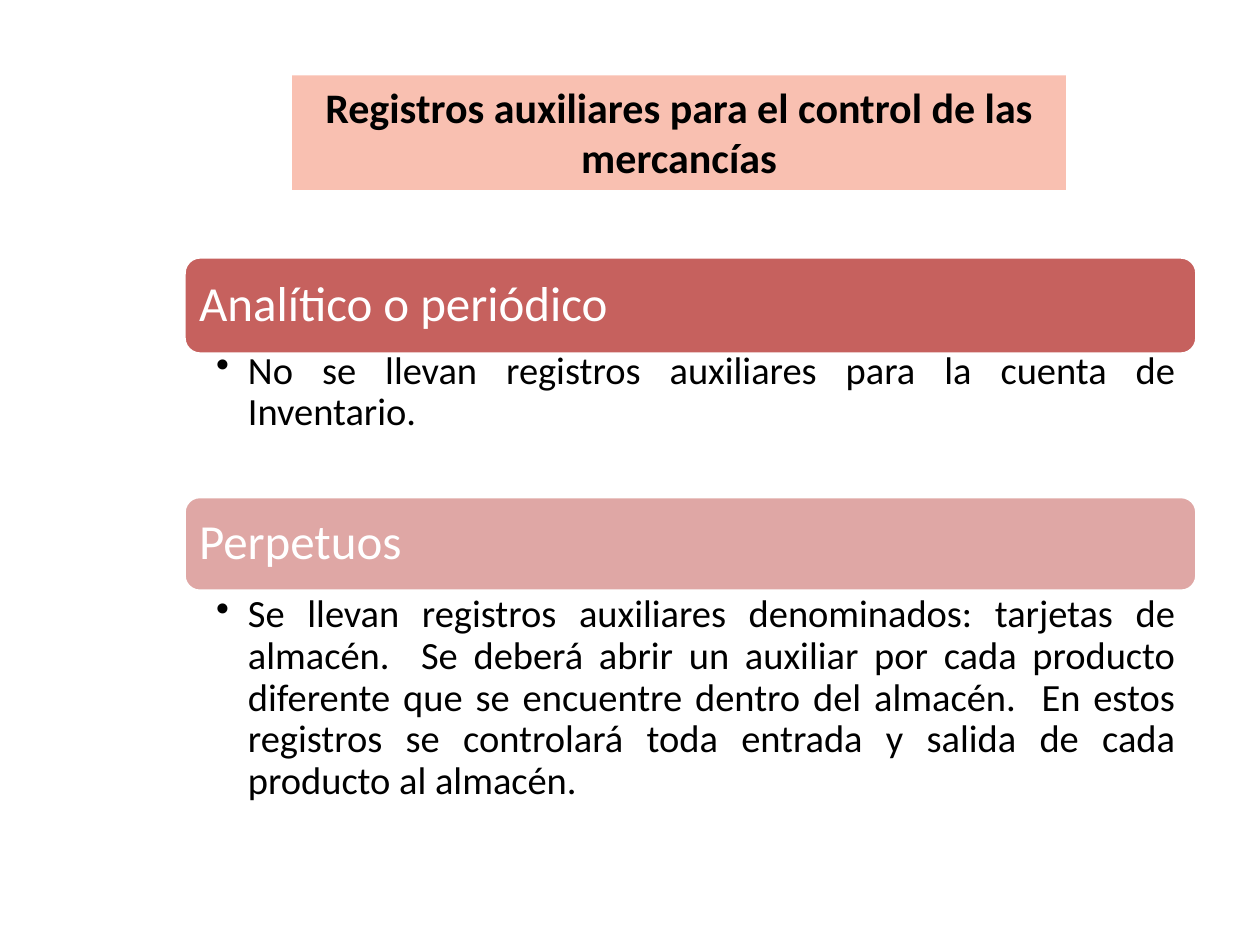
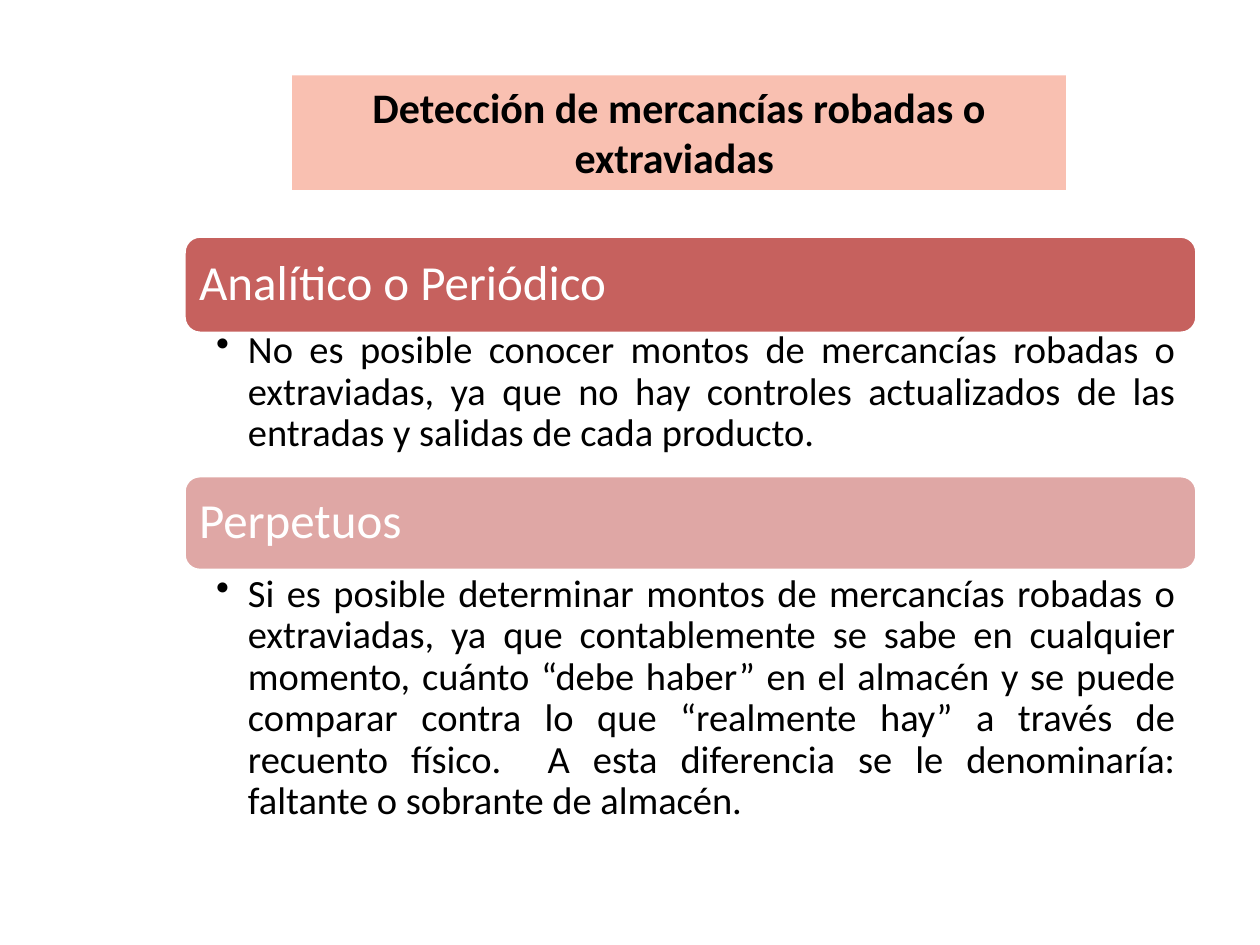
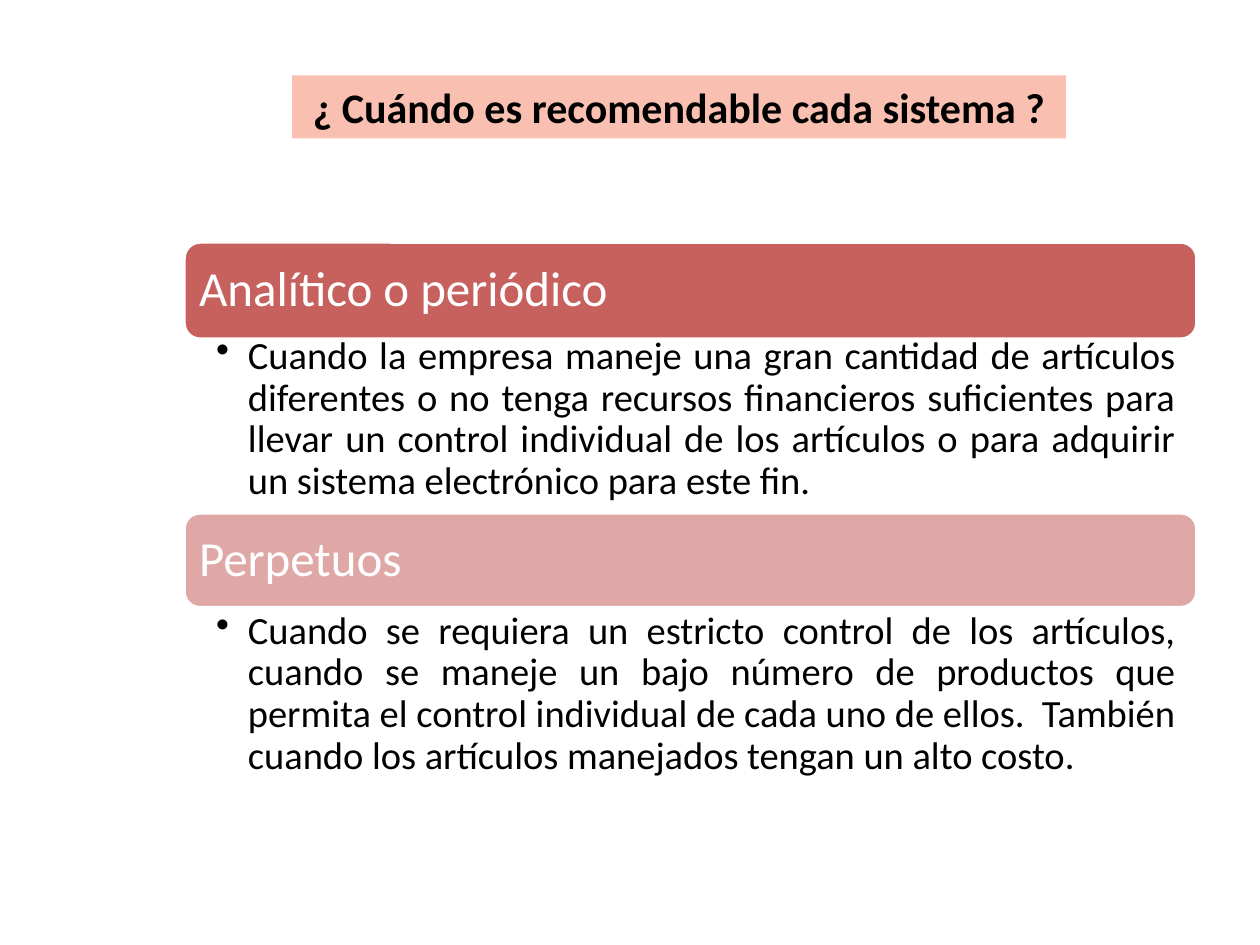
from lxml.etree import SubElement as Sub
from pptx import Presentation
from pptx.dml.color import RGBColor
from pptx.enum.shapes import MSO_SHAPE as Form
from pptx.enum.text import MSO_ANCHOR as Anchor, MSO_AUTO_SIZE as Fit, PP_ALIGN as Align
from pptx.oxml.ns import qn
from pptx.util import Cm, Pt

# Shared style
FONT = "Calibri"
BLACK, WHITE, PEACH, RED = "000000", "FFFFFF", "F9C0B1", "C0504D"

# Shared layout, in centimetres
LEFT, WIDE = 3.71, 20.42
BAR_ONE, BAR_TWO = 1.96, 1.91
LAP = 0.13  # how far the first text slides under its bar


def tint(color, code):
    color.rgb = RGBColor.from_string(code)


class Deck:
    def __init__(self):
        self.prs = Presentation()
        self.prs.slide_width, self.prs.slide_height = Cm(25.4), Cm(19.05)
        self.slide = None

    def page(self):
        self.slide = self.prs.slides.add_slide(self.prs.slide_layouts[6])

    def shape(self, form, box, code):
        shape = self.slide.shapes.add_shape(form, *map(Cm, box))
        shape.shadow.inherit = False
        shape.fill.solid()
        tint(shape.fill.fore_color, code)
        return shape

    def inset(self, frame, left, top, right, low):
        frame.margin_left, frame.margin_top = Cm(left), Cm(top)
        frame.margin_right, frame.margin_bottom = Cm(right), Cm(low)

    def label(self, frame, text, size, code, align, bold=False):
        frame.word_wrap = True
        par = frame.paragraphs[0]
        par.text, par.alignment = text, align
        font = par.font
        font.name, font.size, font.bold = FONT, Pt(size), bold
        tint(font.color, code)
        return par

    def title(self, text, high):
        shape = self.shape(Form.RECTANGLE, (5.89, 1.52, 15.6, high), PEACH)
        shape.line.fill.background()
        frame = shape.text_frame
        frame.vertical_anchor = Anchor.TOP
        self.label(frame, text, 24, BLACK, Align.CENTER, True)
        frame.auto_size = Fit.SHAPE_TO_FIT_TEXT

    def bar(self, text, top, high, alpha):
        shape = self.shape(Form.ROUNDED_RECTANGLE, (LEFT, top, WIDE, high), RED)
        fill = shape.fill._xPr.find(qn("a:solidFill"))
        Sub(fill[0], qn("a:alpha"), val=str(alpha * 1000))
        tint(shape.line.color, WHITE)
        shape.line.width = Pt(2)
        frame = shape.text_frame
        frame.vertical_anchor = Anchor.MIDDLE
        self.inset(frame, 0.21, 0.21, 0.21, 0.21)
        self.label(frame, text, 28, WHITE, Align.LEFT).line_spacing = 0.9

    def body(self, text, top, high):
        box = self.slide.shapes.add_textbox(*map(Cm, (LEFT, top, WIDE, high)))
        frame = box.text_frame
        self.inset(frame, 0.65, 0.07, 0.43, 0.07)
        # The bullet goes in before the font
        par = frame.paragraphs[0]
        par.level = 1
        props = par._p.get_or_add_pPr()
        props.set("marL", str(Cm(0.64)))
        props.set("indent", str(-Cm(0.64)))
        Sub(props, qn("a:buChar"), char="•")
        self.label(frame, text, 22, BLACK, Align.JUSTIFY).line_spacing = 0.9

    def pair(self, top, step, last, name, first, second):
        """Two bars, step apart, each with its text below."""
        start = BAR_ONE - LAP
        self.bar(name, top, BAR_ONE, 90)
        self.body(first, top + start, step - start)
        self.bar("Perpetuos", top + step, BAR_TWO, 50)
        self.body(second, top + step + BAR_TWO, last)


# Title, title height, then top, step, last height, name and both texts
PAGES = [
    ("Registros auxiliares para el control de las mercancías", 2.31,
     (5.18, 4.83, 4.5, "Analítico o periódico",
      "No se llevan registros auxiliares para la cuenta de Inventario.",
      "Se llevan registros auxiliares denominados: tarjetas de almacén.  "
      "Se deberá abrir un auxiliar por cada producto diferente que se "
      "encuentre dentro del almacén.  En estos registros se controlará "
      "toda entrada y salida de cada producto al almacén.")),
    ("Detección de mercancías robadas o extraviadas ", 2.31,
     (4.76, 4.83, 5.33, "Analítico o Periódico",
      "No es posible conocer montos de mercancías robadas o extraviadas, "
      "ya que no hay controles actualizados de las entradas y salidas de "
      "cada producto.",
      "Si es posible determinar montos de mercancías robadas o "
      "extraviadas, ya que contablemente se sabe en cualquier momento, "
      "cuánto “debe haber” en el almacén y se puede comparar contra lo "
      "que “realmente hay” a través de recuento físico.  A esta "
      "diferencia se le denominaría: faltante o sobrante de almacén.")),
    ("¿ Cuándo es recomendable cada sistema ?", 1.27,
     (4.88, 5.46, 4.5, "Analítico o periódico",
      "Cuando la empresa maneje una gran cantidad de artículos diferentes "
      "o no tenga recursos financieros suficientes para llevar un control "
      "individual de los artículos o para adquirir un sistema electrónico "
      "para este fin.",
      "Cuando se requiera un estricto control de los artículos, cuando se "
      "maneje un bajo número de productos que permita el control "
      "individual de cada uno de ellos.  También cuando los artículos "
      "manejados tengan un alto costo.")),
]


def main():
    deck = Deck()
    for title, high, parts in PAGES:
        deck.page()
        deck.pair(*parts)
        deck.title(title, high)
    deck.prs.save("out.pptx")


if __name__ == "__main__":
    main()
